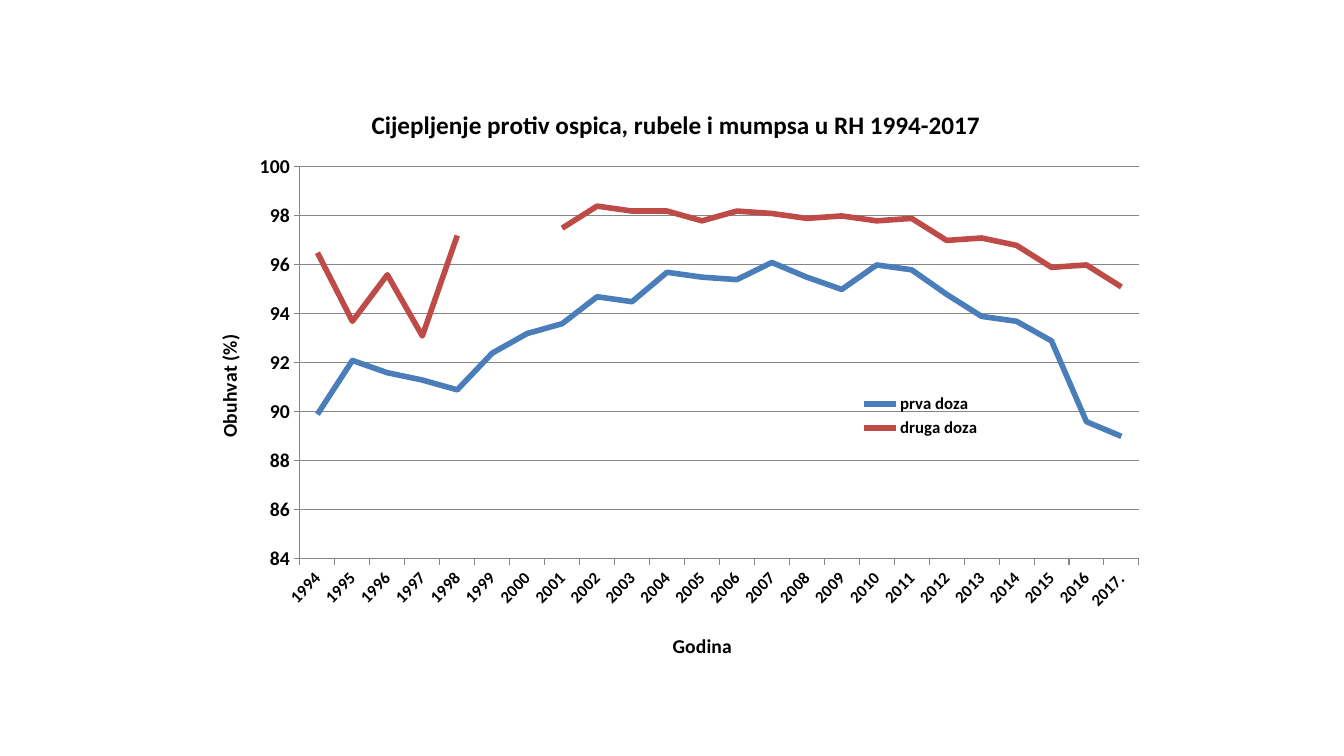
from dataclasses import dataclass

from lxml.etree import SubElement
from pptx import Presentation
from pptx.chart.data import CategoryChartData
from pptx.dml.color import RGBColor
from pptx.enum.chart import XL_CHART_TYPE, XL_LEGEND_POSITION, XL_TICK_MARK
from pptx.oxml.ns import qn
from pptx.util import Emu, Pt

SCALE = 12192000 / 1344  # EMU in one px


@dataclass(frozen=True)
class Theme:
    font: str = "Calibri"
    ink: str = "000000"
    grid: str = "868686"
    blue: str = "4A7EBB"
    red: str = "BE4B48"
    head: int = 18
    label: int = 14
    small: int = 12
    line: int = 4


@dataclass(frozen=True)
class Box:
    left: int
    top: int
    width: int
    height: int


@dataclass(frozen=True)
class Dose:
    name: str
    color: str
    vals: tuple


THEME = Theme()
FRAME = Box(185, 81, 972, 594)
PLOT = Box(300, 167, 839, 392)
KEY = Box(846, 390, 150, 52)
YEARS = [str(year) for year in range(1994, 2017)] + ["2017."]
DOSES = [
    Dose("prva doza", THEME.blue, (
        89.9, 92.1, 91.6, 91.3, 90.9, 92.4, 93.2, 93.6, 94.7, 94.5, 95.7, 95.5,
        95.4, 96.1, 95.5, 95, 96, 95.8, 94.8, 93.9, 93.7, 92.9, 89.6, 89)),
    Dose("druga doza", THEME.red, (
        96.5, 93.7, 95.6, 93.1, 97.2, None, None, 97.5, 98.4, 98.2, 98.2, 97.8,
        98.2, 98.1, 97.9, 98, 97.8, 97.9, 97, 97.1, 96.8, 95.9, 96, 95.1)),
]


def px(count: int) -> Emu:
    return Emu(round(count * SCALE))


def style(font, size: int) -> None:
    font.name = THEME.font
    font.size = Pt(size)
    font.bold = True
    font.color.rgb = RGBColor.from_string(THEME.ink)


def place(node, index: int, box: Box, inner: bool = False) -> None:
    """Fix a chart part at a place given in slide px."""
    for old in node.findall(qn("c:layout")):
        node.remove(old)
    layout = node.makeelement(qn("c:layout"))
    node.insert(index, layout)
    manual = SubElement(layout, qn("c:manualLayout"))
    parts = [("layoutTarget", "inner")] if inner else []
    parts += [("xMode", "edge"), ("yMode", "edge"),
              ("x", (box.left - FRAME.left) / FRAME.width),
              ("y", (box.top - FRAME.top) / FRAME.height)]
    if box.width:
        parts += [("w", box.width / FRAME.width), ("h", box.height / FRAME.height)]
    for tag, value in parts:
        text = value if isinstance(value, str) else f"{value:.4f}"
        SubElement(manual, qn(f"c:{tag}")).set("val", text)


def add_title(owner, text: str, size: int, left: int, top: int) -> None:
    owner.has_title = True
    title = owner.chart_title if hasattr(owner, "chart_title") else owner.axis_title
    run = title.text_frame.paragraphs[0].add_run()
    run.text = text
    style(run.font, size)
    place(title._element, 1, Box(left, top, 0, 0))


def style_axis(axis, size: int) -> None:
    axis.major_tick_mark = XL_TICK_MARK.OUTSIDE
    axis.minor_tick_mark = XL_TICK_MARK.NONE
    style(axis.tick_labels.font, size)
    paint(axis.format.line, THEME.grid, 0.75)


def paint(line, color: str, width: float) -> None:
    line.color.rgb = RGBColor.from_string(color)
    line.width = Pt(width)


def add_doses(slide) -> None:
    data = CategoryChartData(number_format="General")
    data.categories = YEARS
    for dose in DOSES:
        data.add_series(dose.name, dose.vals)
    chart = slide.shapes.add_chart(
        XL_CHART_TYPE.LINE, px(FRAME.left), px(FRAME.top),
        px(FRAME.width), px(FRAME.height), data).chart
    chart.font.name = THEME.font
    chart.font.size = Pt(10)
    chart.font.color.rgb = RGBColor.from_string(THEME.ink)

    # Lines
    chart.plots[0].vary_by_categories = False
    for series, dose in zip(chart.plots[0].series, DOSES):
        series.smooth = False
        paint(series.format.line, dose.color, THEME.line)

    # Axes
    years, rate = chart.category_axis, chart.value_axis
    style_axis(years, THEME.small)
    style_axis(rate, THEME.label)
    years._element.find(qn("c:txPr")).find(qn("a:bodyPr")).set("rot", "-2700000")
    rate.minimum_scale, rate.maximum_scale, rate.major_unit = 84, 100, 2
    rate.has_major_gridlines = True
    paint(rate.major_gridlines.format.line, THEME.grid, 0.75)

    # Titles
    add_title(chart, "Cijepljenje protiv ospica, rubele i mumpsa u RH 1994-2017",
              THEME.head, 367, 103)
    add_title(years, "Godina", THEME.label, 669, 629)
    add_title(rate, "Obuhvat (%)", THEME.label, 212, 331)
    body = rate.axis_title.text_frame._txBody.find(qn("a:bodyPr"))
    body.set("rot", "-5400000")
    body.set("vert", "horz")

    # Legend
    chart.has_legend = True
    chart.legend.position = XL_LEGEND_POSITION.RIGHT
    chart.legend.include_in_layout = True
    style(chart.legend.font, THEME.small)
    place(chart.legend._element, 1, KEY)
    place(chart._chartSpace.chart.plotArea, 0, PLOT, inner=True)


def main() -> None:
    deck = Presentation()
    deck.slide_width, deck.slide_height = px(1344), px(756)
    add_doses(deck.slides.add_slide(deck.slide_layouts[6]))
    deck.save("out.pptx")


if __name__ == "__main__":
    main()
